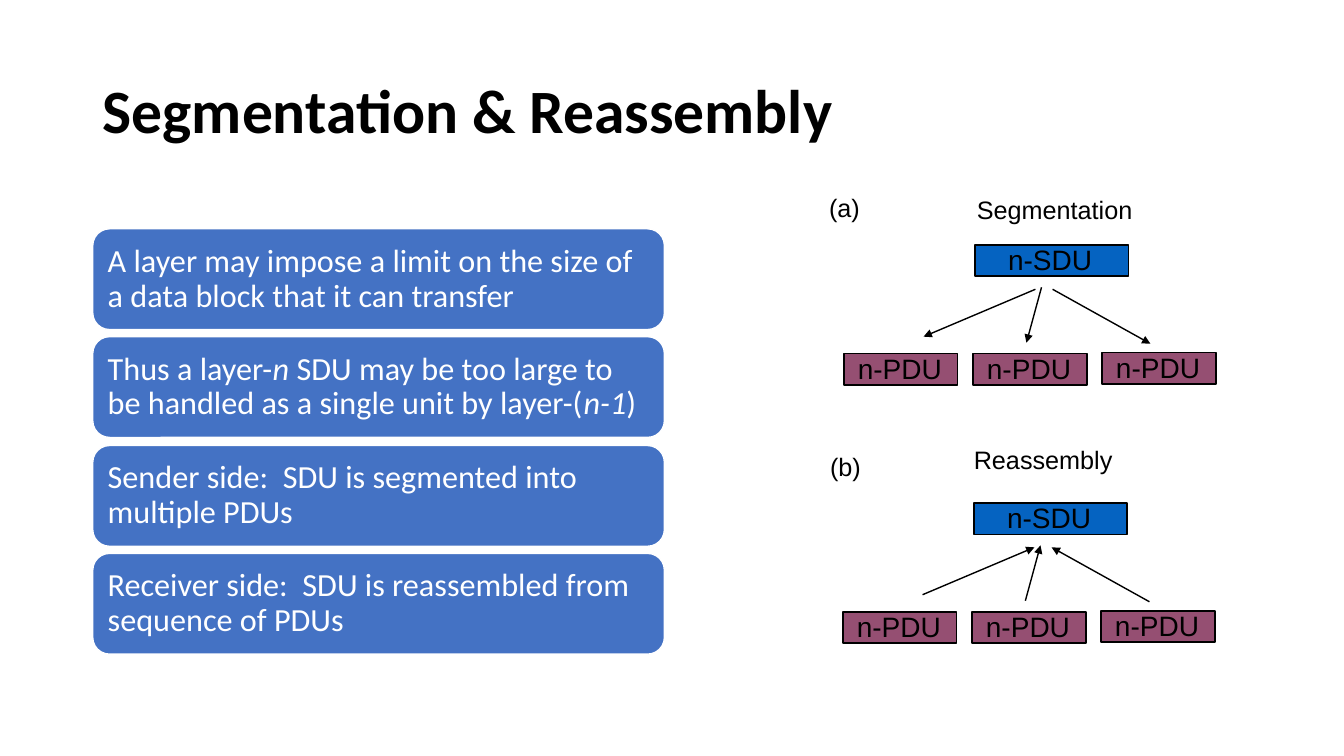
from lxml.etree import SubElement
from pptx import Presentation
from pptx.dml.color import RGBColor
from pptx.enum.shapes import MSO_CONNECTOR, MSO_SHAPE
from pptx.enum.text import MSO_ANCHOR, PP_ALIGN
from pptx.oxml.ns import qn
from pptx.util import Pt

SCALE = 9144
BLACK = RGBColor(0x00, 0x00, 0x00)
WHITE = RGBColor(0xFF, 0xFF, 0xFF)
CARD_BLUE = RGBColor(0x44, 0x72, 0xC4)
SDU_BLUE = RGBColor(0x05, 0x63, 0xC1)
PDU_PURPLE = RGBColor(0x95, 0x4F, 0x72)

POINTS = [
    "A layer may impose a limit on the size of a data block that it can transfer",
    "Thus a layer-*n* SDU may be too large to be handled as a single unit by layer-(*n-1*)",
    "Sender side:  SDU is segmented into multiple PDUs",
    "Receiver side:  SDU is reassembled from sequence of PDUs",
]
PDU_OFFSETS = [(0, 108), (128, 108), (256, 107)]
ARROWS = [((190, 44), (79, 91)), ((196, 42), (181, 97)), ((207, 44), (304, 98))]


def px(*lengths):
    return [length * SCALE for length in lengths]


def write(shape, text, size=18, font="Arial", color=BLACK, bold=False, wrap=True,
          anchor=MSO_ANCHOR.MIDDLE, align=PP_ALIGN.LEFT, spacing=1.0, insets=(10, 5, 10, 5)):
    frame = shape.text_frame
    frame.word_wrap = wrap
    frame.vertical_anchor = anchor
    (frame.margin_left, frame.margin_top,
     frame.margin_right, frame.margin_bottom) = px(*insets)
    para = frame.paragraphs[0]
    para.alignment = align
    para.line_spacing = spacing
    for index, part in enumerate(text.split("*")):
        span = para.add_run()
        span.text = part
        span.font.name = font
        span.font.size = Pt(size)
        span.font.bold = bold
        span.font.italic = index % 2 == 1
        span.font.color.rgb = color


def add_label(page, box, text, **style):
    write(page.shapes.add_textbox(*px(*box)), text, **style)


def add_block(page, kind, box, fill, line):
    block = page.shapes.add_shape(kind, *px(*box))
    block.shadow.inherit = False
    block.fill.solid()
    block.fill.fore_color.rgb = fill
    block.line.color.rgb = line
    block.line.width = Pt(1)


def add_unit(page, box, text, fill, indent):
    left, top = box[:2]
    add_block(page, MSO_SHAPE.RECTANGLE, box, fill, BLACK)
    add_label(page, (left + indent, top - 7, 104, 43), text, size=20,
              wrap=False, anchor=MSO_ANCHOR.TOP)


def add_arrow(page, start, end):
    arrow = page.shapes.add_connector(MSO_CONNECTOR.STRAIGHT, *px(*start, *end))
    arrow.line.color.rgb = BLACK
    arrow.line.width = Pt(1)
    properties = arrow._element.spPr
    SubElement(properties.find(qn("a:ln")), qn("a:tailEnd"), type="triangle")
    SubElement(properties, qn("a:effectLst"))


def add_points(page, box):
    left, top, width, height = box
    pitch = height / len(POINTS)
    for index, text in enumerate(POINTS):
        card_top = round(top + index * pitch)
        add_block(page, MSO_SHAPE.ROUNDED_RECTANGLE, (left, card_top, width, 100),
                  CARD_BLUE, WHITE)
        add_label(page, (left + 5, card_top + 5, width - 10, 90), text, size=23,
                  font="Calibri", color=WHITE, spacing=0.9, insets=(10, 10, 10, 10))


def add_diagram(page, origin, letter, letter_box, heading, heading_box, upward=False):
    left, top = origin
    add_label(page, letter_box, letter, wrap=False, align=PP_ALIGN.CENTER)
    add_label(page, heading_box, heading, wrap=False, anchor=MSO_ANCHOR.TOP)
    add_unit(page, (left + 130, top, 152, 31), "n-SDU", SDU_BLUE, 23)
    for across, down in PDU_OFFSETS:
        add_unit(page, (left + across, top + down, 113, 31), "n-PDU", PDU_PURPLE, 4)
    for ends in ARROWS:
        start, end = [(left + across, top + down) for across, down in ends]
        if upward:
            start, end = end, start
        add_arrow(page, start, end)


def main():
    deck = Presentation()
    deck.slide_width, deck.slide_height = px(1333, 750)
    page = deck.slides.add_slide(deck.slide_layouts[6])
    add_label(page, (92, 40, 1150, 145), "Segmentation & Reassembly",
              size=44, font="Calibri", bold=True, spacing=0.9)
    add_points(page, (92, 227, 567, 429))
    add_diagram(page, (837, 243), "(a)", (812, 186, 51, 40),
                "Segmentation", (959, 188, 176, 40))
    add_diagram(page, (836, 499), "(b)", (813, 443, 51, 40),
                "Reassembly", (956, 436, 159, 40), upward=True)
    deck.save("out.pptx")


if __name__ == "__main__":
    main()
